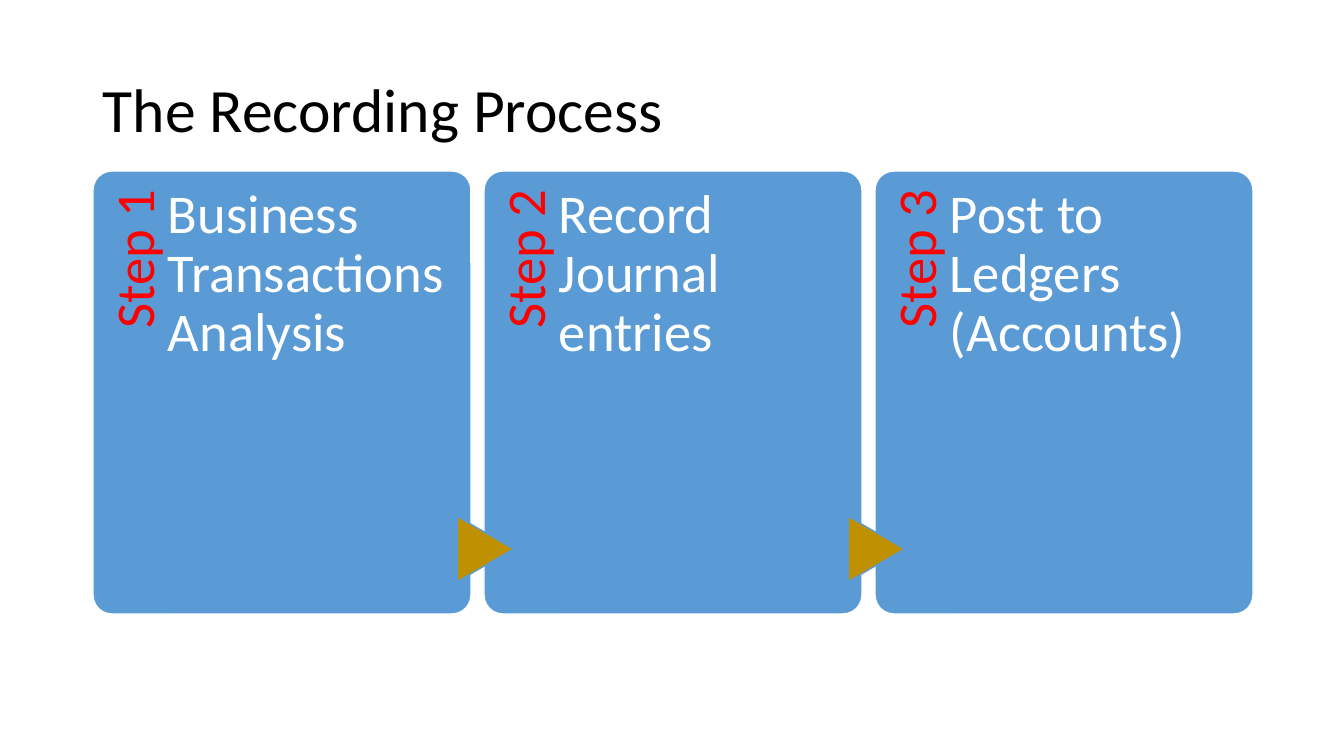
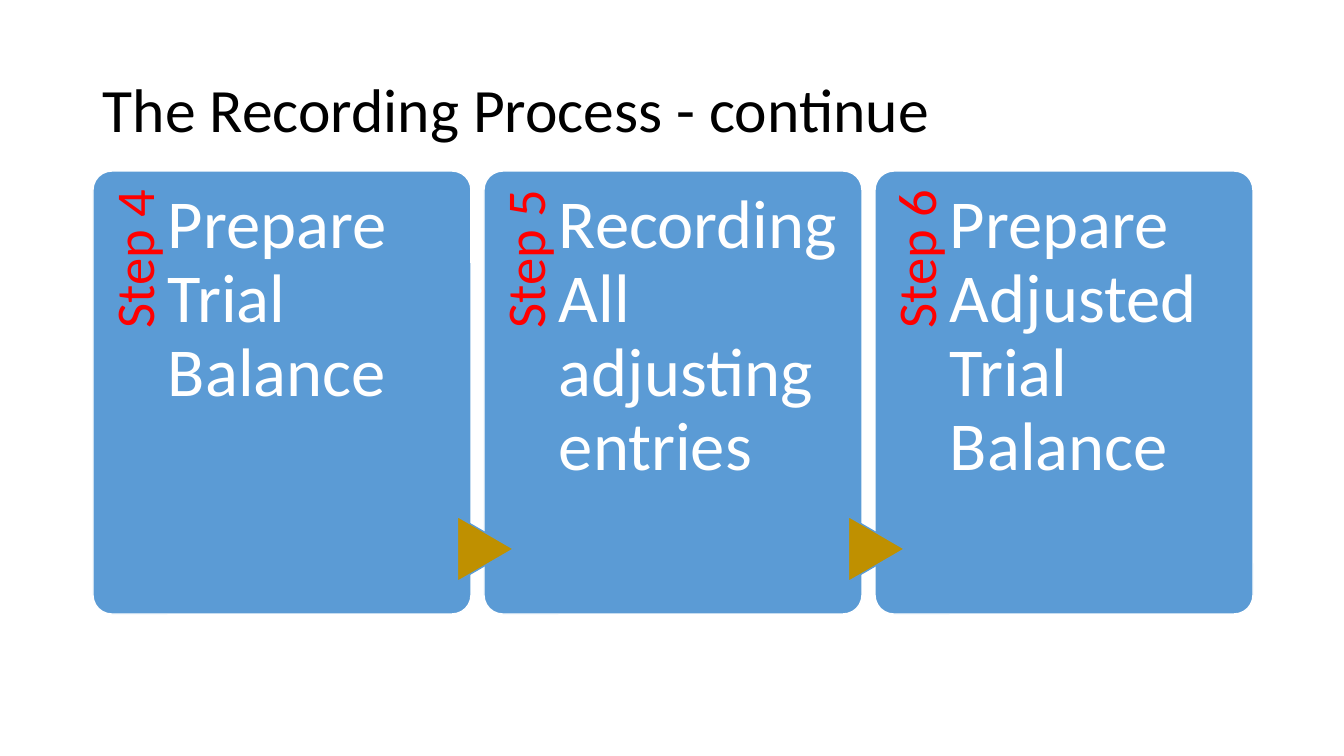
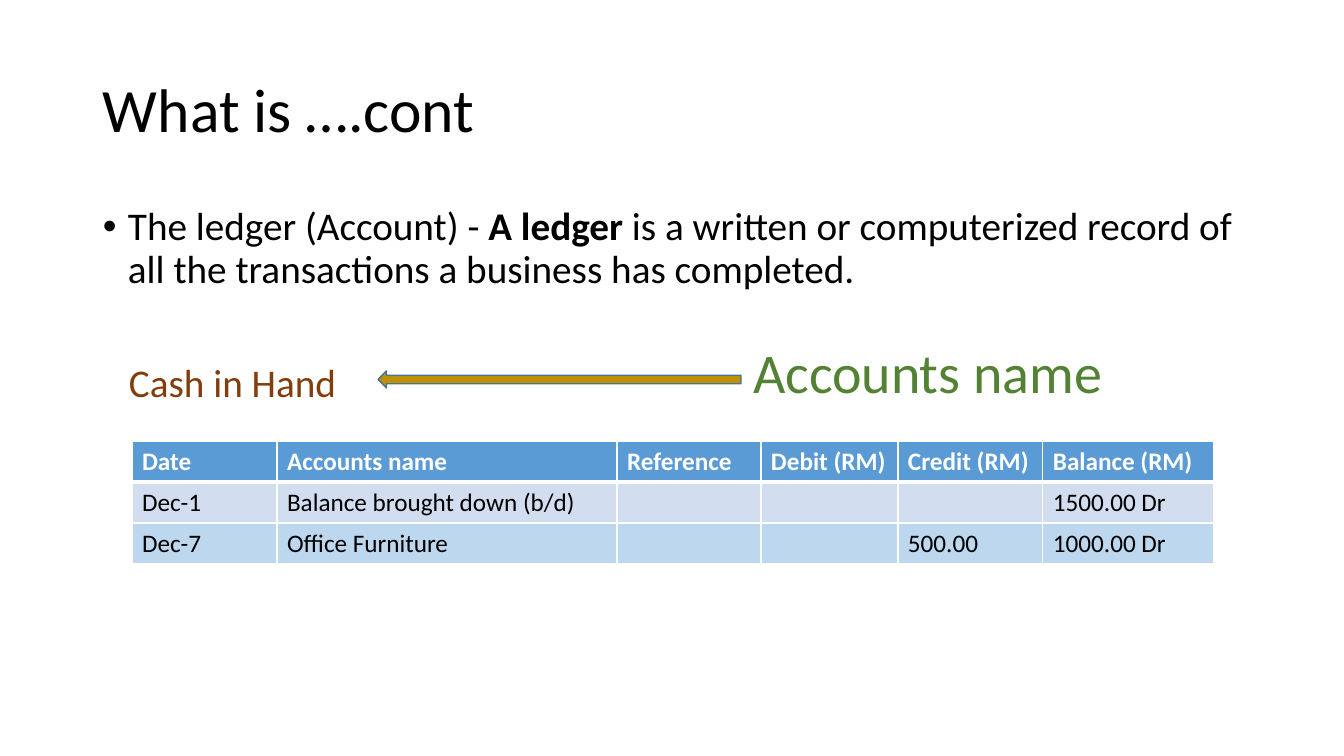
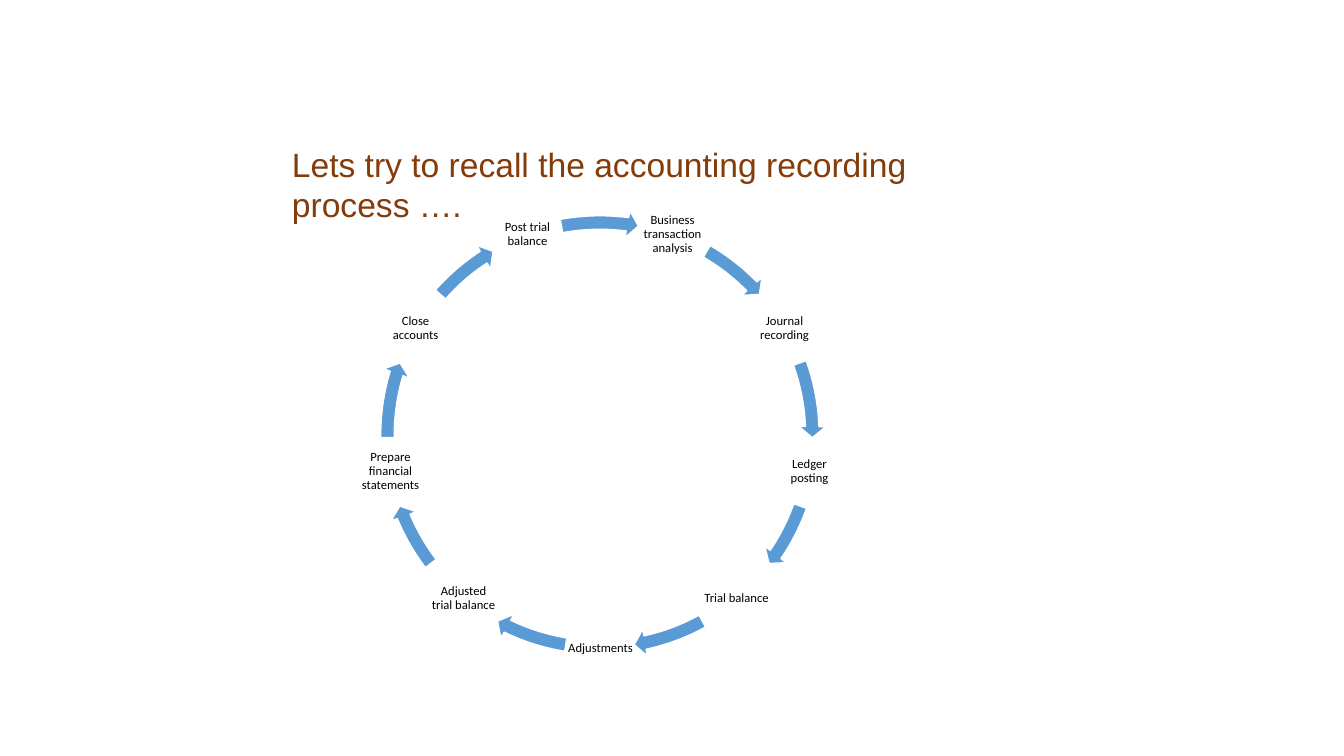
from dataclasses import dataclass
from math import cos, radians, sin

from lxml.etree import SubElement
from pptx import Presentation
from pptx.dml.color import RGBColor
from pptx.enum.shapes import MSO_SHAPE
from pptx.enum.text import MSO_ANCHOR, PP_ALIGN
from pptx.oxml.ns import qn
from pptx.util import Emu, Pt

PX = 914400 / 100.8  # EMU in one pixel


@dataclass(frozen=True)
class Theme:
    font: str = "Calibri"
    heading_font: str = "Arial"
    black: str = "000000"
    white: str = "FFFFFF"
    blue: str = "5B9BD5"
    dark_blue: str = "43739E"
    gold: str = "BF9000"
    red: str = "FF0000"
    brown: str = "843C0B"
    green: str = "548235"
    table_rows: tuple = ("5B9BD5", "D2DEEF", "BDD7EE")
    title_size: int = 44
    callout_size: int = 40
    step_size: int = 39
    large_step_size: int = 49
    body_size: int = 28
    heading_size: int = 24
    table_size: int = 18
    cycle_size: int = 9


theme = Theme()


def add_text(slide, box, text, size, color=theme.black, font=theme.font, align=PP_ALIGN.LEFT,
             anchor=MSO_ANCHOR.TOP, insets=(10, 5, 10, 5), spacing=0.9):
    """Add a wrapped text box; box and insets (left, top, right, bottom) are in px."""
    shape = slide.shapes.add_textbox(*(Emu(round(value * PX)) for value in box))
    frame = shape.text_frame
    frame.word_wrap = True
    frame.vertical_anchor = anchor
    frame.margin_left, frame.margin_top, frame.margin_right, frame.margin_bottom = (
        Emu(round(value * PX)) for value in insets)
    frame.text = text
    paragraph = frame.paragraphs[0]
    paragraph.alignment = align
    paragraph.line_spacing = spacing
    for run in paragraph.runs:
        run.font.name = font
        run.font.size = Pt(size)
        run.font.color.rgb = RGBColor.from_string(color)
    return shape


def add_shape(slide, kind, box, fill, line, adjustments=()):
    """Add a flat preset shape with a 1 pt outline; box is in px."""
    shape = slide.shapes.add_shape(kind, *(Emu(round(value * PX)) for value in box))
    shape.shadow.inherit = False
    shape.fill.solid()
    shape.fill.fore_color.rgb = RGBColor.from_string(fill)
    shape.line.color.rgb = RGBColor.from_string(line)
    shape.line.width = Pt(1)
    for index, value in enumerate(adjustments):
        shape.adjustments[index] = value
    return shape


presentation = Presentation()
presentation.slide_width = Emu(round(1344 * PX))
presentation.slide_height = Emu(round(756 * PX))
blank_layout = presentation.slide_layouts[6]
title_box = (93, 40, 1159, 146)

# Slides 1 and 2: three step cards each
process_slides = [
    ("The Recording Process", theme.step_size, 15,
     ["Business Transactions Analysis", "Record Journal entries", "Post to Ledgers (Accounts)"]),
    ("The Recording Process - continue", theme.large_step_size, 18,
     ["Prepare Trial Balance", "Recording All adjusting entries", "Prepare Adjusted Trial Balance"]),
]
card_left, card_top, card_width, card_height, card_pitch = 93, 171, 378, 443, 391
step_number = 0
for title, size, top_inset, steps in process_slides:
    slide = presentation.slides.add_slide(blank_layout)
    add_text(slide, title_box, title, theme.title_size, anchor=MSO_ANCHOR.MIDDLE)
    for index, step in enumerate(steps):
        step_number += 1
        left = card_left + index * card_pitch
        add_shape(slide, MSO_SHAPE.ROUNDED_RECTANGLE, (left, card_top, card_width, card_height),
                  theme.blue, theme.white, [0.05])
        label = add_text(slide, (left - 144, 314, 363, 76), f"Step {step_number}", theme.step_size,
                         theme.red, align=PP_ALIGN.RIGHT, insets=(0, 15, 19, 0))
        label.rotation = 270
        if index > 0:
            pointer = add_shape(slide, MSO_SHAPE.FLOWCHART_EXTRACT, (left - 31, 521, 65, 56),
                                theme.gold, theme.blue)
            pointer.rotation = 90
        add_text(slide, (left + 75, card_top, 281, card_height), step, size, theme.white,
                 insets=(0, top_inset, 0, 0))

# Slide 3: ledger definition
slide = presentation.slides.add_slide(blank_layout)
add_text(slide, title_box, "What is ….cont", theme.title_size, anchor=MSO_ANCHOR.MIDDLE)
definition = add_text(slide, (93, 202, 1159, 100), "", theme.body_size)
paragraph = definition.text_frame.paragraphs[0]
properties = paragraph._p.get_or_add_pPr()
properties.set("marL", str(round(25 * PX)))
properties.set("indent", str(round(-25 * PX)))
SubElement(properties, qn("a:buFont"), typeface=theme.heading_font)
SubElement(properties, qn("a:buChar"), char="•")
for text, bold in [
    ("The ledger (Account) - ", False),
    ("A ledger", True),
    (" is a written or computerized record of all the transactions a business has completed.", False),
]:
    run = paragraph.add_run()
    run.text = text
    run.font.name = theme.font
    run.font.size = Pt(theme.body_size)
    run.font.bold = bold
    run.font.color.rgb = RGBColor.from_string(theme.black)

# Account name and its callout
add_text(slide, (119, 359, 250, 53), "Cash in Hand", theme.body_size, theme.brown)
add_shape(slide, MSO_SHAPE.LEFT_ARROW, (378, 371, 363, 17), theme.gold, theme.dark_blue)
callout = add_text(slide, (741, 333, 373, 78), "Accounts name", theme.callout_size, theme.green,
                   align=PP_ALIGN.CENTER, spacing=1.0)
callout.text_frame.word_wrap = False

# Ledger table
ledger_rows = [
    ["Date", "Accounts name", "Reference", "Debit (RM)", "Credit (RM)", "Balance (RM)"],
    ["Dec-1", "Balance brought down (b/d)", "", "", "", "1500.00 Dr"],
    ["Dec-7", "Office Furniture", "", "", "500.00", "1000.00 Dr"],
]
column_widths = [145, 340, 144, 137, 145, 171]
row_height = 41
table_box = (132, 441, sum(column_widths), row_height * len(ledger_rows))
table = slide.shapes.add_table(len(ledger_rows), len(column_widths),
                               *(Emu(round(value * PX)) for value in table_box)).table
for column, width in zip(table.columns, column_widths):
    column.width = Emu(round(width * PX))
for row_index, values in enumerate(ledger_rows):
    table.rows[row_index].height = Emu(round(row_height * PX))
    for column_index, value in enumerate(values):
        cell = table.cell(row_index, column_index)
        cell_properties = cell._tc.get_or_add_tcPr()
        for edge in ("lnL", "lnR", "lnT", "lnB"):
            below_header = (row_index, edge) in ((0, "lnB"), (1, "lnT"))
            border = SubElement(cell_properties, qn(f"a:{edge}"), w=str(Pt(3 if below_header else 1)))
            border_fill = SubElement(border, qn("a:solidFill"))
            SubElement(border_fill, qn("a:srgbClr"), val=theme.white)
        cell.fill.solid()
        cell.fill.fore_color.rgb = RGBColor.from_string(theme.table_rows[row_index])
        cell.text_frame.text = value
        font = cell.text_frame.paragraphs[0].font
        font.size = Pt(theme.table_size)
        for run in cell.text_frame.paragraphs[0].runs:
            run.font.name = theme.font
            run.font.size = Pt(theme.table_size)
            run.font.bold = row_index == 0
            run.font.color.rgb = RGBColor.from_string(theme.white if row_index == 0 else theme.black)

# Slide 4: accounting cycle, each stage with the start and end angle of its arrow
slide = presentation.slides.add_slide(blank_layout)
stages = [
    ("Business transaction analysis", 300.2, 315.63),
    ("Journal recording", 340.18, 357.73),
    ("Ledger posting", 19.55, 34.24),
    ("Trial balance", 61.19, 77.74),
    ("Adjustments", 99.26, 115.81),
    ("Adjusted trial balance", 142.76, 157.46),
    ("Prepare financial statements", 179.27, 196.82),
    ("Close accounts", 221.37, 236.81),
    ("Post trial balance", 259.57, 277.44),
]
center_x, center_y, radius = 600, 435, 213
label_size, ring_size = 69, 452
ring_box = (center_x - ring_size // 2, center_y - ring_size // 2, ring_size, ring_size)
degree = 0.6  # one degree in adjustment units
for index, (stage, start, end) in enumerate(stages):
    angle = radians(-70 + index * 360 / len(stages))
    label_left = round(center_x + radius * cos(angle) - label_size / 2)
    label_top = round(center_y + radius * sin(angle) - label_size / 2)
    add_text(slide, (label_left, label_top, label_size, label_size), stage, theme.cycle_size,
             align=PP_ALIGN.CENTER, anchor=MSO_ANCHOR.MIDDLE, insets=(1, 1, 1, 1))
    add_shape(slide, MSO_SHAPE.CIRCULAR_ARROW, ring_box, theme.blue, theme.white,
              [0.03, 3 * degree, end * degree, start * degree, 0.03])

add_text(slide, (282, 139, 724, 92), "Lets try to recall the accounting recording process ….",
         theme.heading_size, theme.brown, theme.heading_font, spacing=1.0)

presentation.save("out.pptx")
